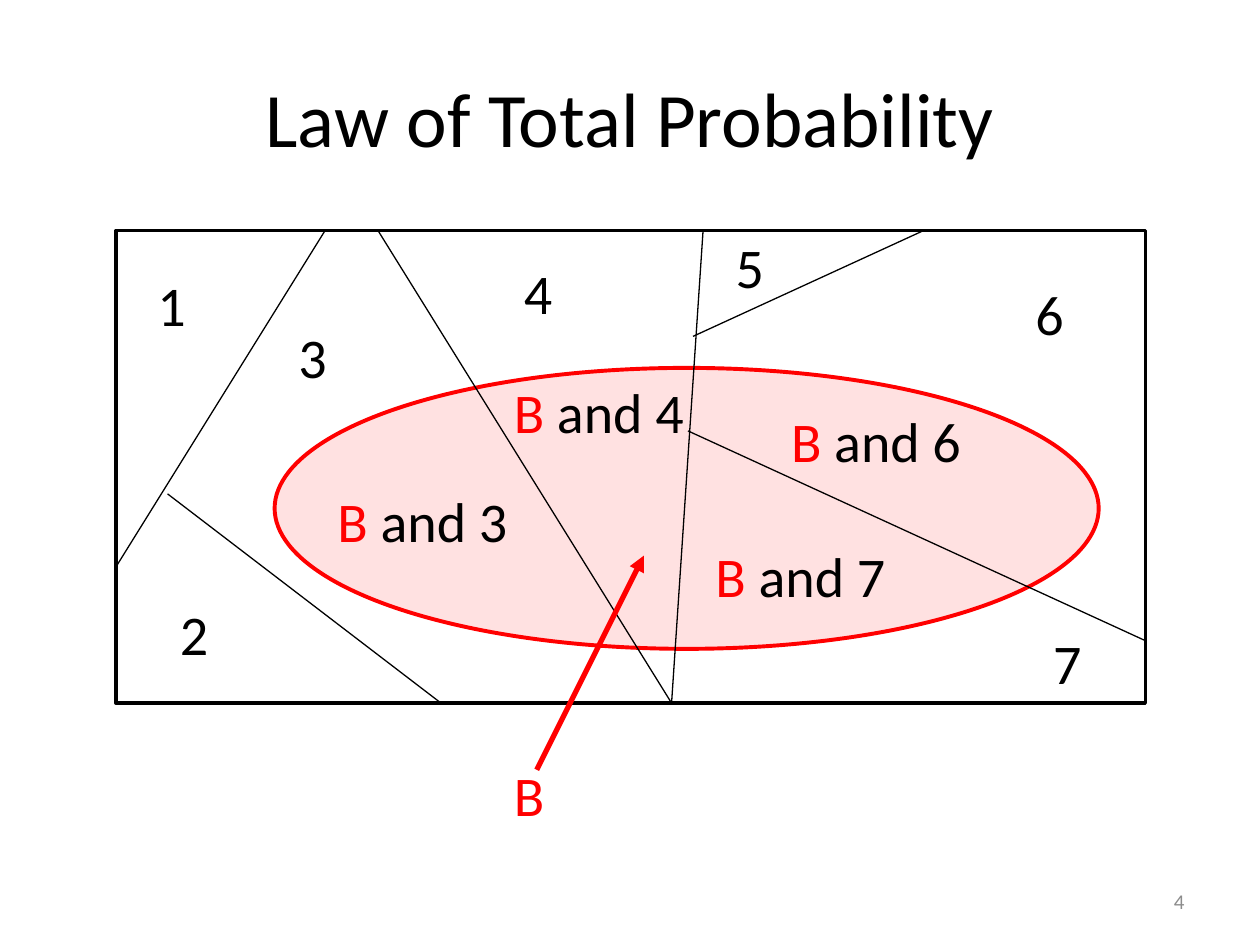
import pptx
import pptx.dml.color
import pptx.enum.shapes
import pptx.enum.text
import pptx.oxml.ns
import pptx.util
from lxml import etree
from pptx.util import Inches

BLACK, RED, PINK, GRAY = "000000", "FF0000", "FFE1E1", "8C8C8C"
SHAPE = pptx.enum.shapes.MSO_SHAPE
ALIGN = pptx.enum.text.PP_ALIGN

# Offsets from the top left corner of the sample space
DIVIDERS = [
    ((1.66, 0), (0, 2.67)),
    ((2.08, 0), (4.41, 3.75)),
    ((4.66, 0), (4.41, 3.75)),
    ((0.41, 2.09), (2.58, 3.75)),
    ((4.58, 0.84), (6.41, 0)),
    ((4.54, 1.59), (8.16, 3.25)),
]
REGIONS = {
    "1": (0.23, 0.27), "2": (0.41, 2.88), "3": (1.35, 0.68), "4": (3.14, 0.17),
    "5": (4.82, -0.03), "6": (7.2, 0.34), "7": (7.34, 3.11),
}
OVERLAPS = {"3": (1.66, 1.98), "4": (3.06, 1.12), "6": (5.26, 1.35), "7": (4.66, 2.42)}


def rgb(color):
    return pptx.dml.color.RGBColor.from_string(color)


def add_text(slide, box, runs, size, align=ALIGN.LEFT, middle=False, wrap=False):
    """Place one paragraph; runs is a list of (text, color)."""
    tf = slide.shapes.add_textbox(*map(Inches, box)).text_frame
    tf.word_wrap = wrap
    if middle:
        tf.vertical_anchor = pptx.enum.text.MSO_ANCHOR.MIDDLE
    else:
        tf.auto_size = pptx.enum.text.MSO_AUTO_SIZE.SHAPE_TO_FIT_TEXT
    p = tf.paragraphs[0]
    p.alignment = align
    for text, color in runs:
        r = p.add_run()
        r.text = text
        r.font.name = "Calibri"
        r.font.size = pptx.util.Pt(size)
        r.font.color.rgb = rgb(color)


def add_outline(slide, kind, box, color, width, fill=None):
    sp = slide.shapes.add_shape(kind, *map(Inches, box))
    sp.shadow.inherit = False
    if fill:
        sp.fill.solid()
        sp.fill.fore_color.rgb = rgb(fill)
    else:
        sp.fill.background()
    sp.line.color.rgb = rgb(color)
    sp.line.width = pptx.util.Pt(width)


def add_line(slide, start, end, color, width, arrow=False):
    line = slide.shapes.add_connector(
        pptx.enum.shapes.MSO_CONNECTOR.STRAIGHT, *map(Inches, (*start, *end)))
    line.line.color.rgb = rgb(color)
    line.line.width = pptx.util.Pt(width)
    if arrow:
        etree.SubElement(line.line._get_or_add_ln(),
                         pptx.oxml.ns.qn("a:tailEnd"), type="triangle")
    etree.SubElement(line._element.spPr, pptx.oxml.ns.qn("a:effectLst"))


def add_partition_diagram(slide, box):
    """Draw the partitioned sample space with event B across its regions."""
    left, top, width, height = box

    def at(point):
        return left + point[0], top + point[1]

    add_outline(slide, SHAPE.OVAL, (*at((1.26, 1.09)), 6.54, 2.23), RED, 2.25, PINK)
    add_outline(slide, SHAPE.RECTANGLE, box, BLACK, 2)
    for start, end in DIVIDERS:
        add_line(slide, at(start), at(end), BLACK, 0.75)
    for name, point in REGIONS.items():
        add_text(slide, (*at(point), 0.43, 0.64), [(name, BLACK)], 32)
    for name, point in OVERLAPS.items():
        add_text(slide, (*at(point), 1.57, 0.64),
                 [("B", RED), (f" and {name}", BLACK)], 32)
    add_text(slide, (*at((3.06, 4.16)), 0.45, 0.64), [("B", RED)], 32)
    add_line(slide, at((3.34, 4.28)), at((4.19, 2.58)), RED, 3, arrow=True)


def main():
    prs = pptx.Presentation()
    prs.slide_width, prs.slide_height = Inches(10), Inches(7.5)
    slide = prs.slides.add_slide(prs.slide_layouts[6])
    add_text(slide, (0.5, 0.3, 9, 1.25), [("Law of Total Probability", BLACK)],
             44, ALIGN.CENTER, middle=True, wrap=True)
    add_partition_diagram(slide, (0.92, 1.83, 8.17, 3.75))
    add_text(slide, (7.17, 6.95, 2.33, 0.4), [("4", GRAY)],
             12, ALIGN.RIGHT, middle=True, wrap=True)
    prs.save("out.pptx")


if __name__ == "__main__":
    main()
